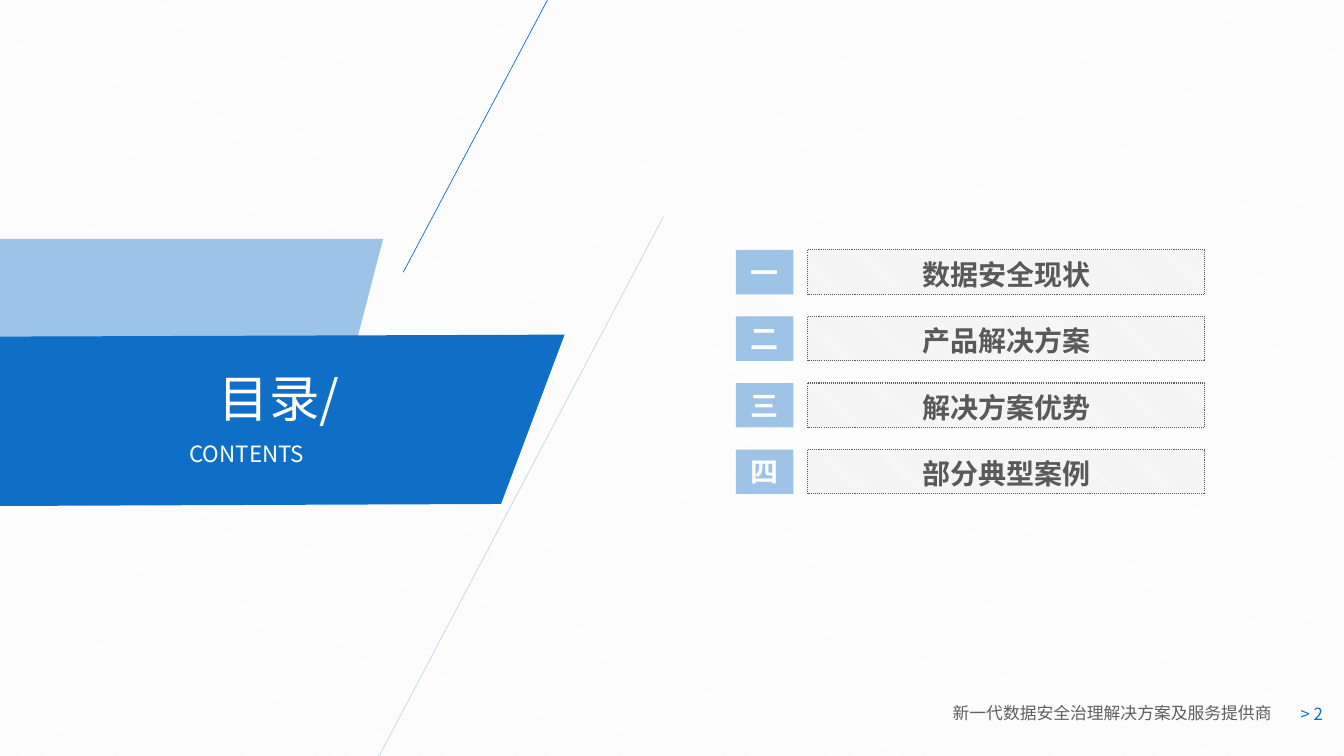
from lxml import etree
from pptx import Presentation
from pptx.dml.color import RGBColor
from pptx.enum.dml import MSO_LINE, MSO_PATTERN
from pptx.enum.shapes import MSO_CONNECTOR, MSO_SHAPE
from pptx.enum.text import MSO_ANCHOR, PP_ALIGN
from pptx.oxml.ns import qn
from pptx.util import Inches, Pt

FONT = "Noto Sans CJK SC"
BLUE, LIGHT_BLUE, PALE_BLUE = "0F6FC6", "9DC3E6", "BDD7EE"
WHITE, GRAY, DARK_GRAY = "FFFFFF", "D9D9D9", "595959"
TOP, MIDDLE = MSO_ANCHOR.TOP, MSO_ANCHOR.MIDDLE
LEFT, CENTER, RIGHT = PP_ALIGN.LEFT, PP_ALIGN.CENTER, PP_ALIGN.RIGHT
JUSTIFY = PP_ALIGN.JUSTIFY


def rgb(color):
    return RGBColor.from_string(color)


def write(sp, text, size=20, color=WHITE, bold=False, align=LEFT,
          anchor=TOP, spacing=None, inset=0.05):
    """Put one formatted paragraph into a shape; inset is top and bottom."""
    tf = sp.text_frame
    tf.word_wrap = True
    tf.vertical_anchor = anchor
    tf.margin_top = tf.margin_bottom = Inches(inset)
    p = tf.paragraphs[0]
    p.alignment = align
    if spacing:
        p.line_spacing = spacing
    r = p.add_run()
    r.text = text
    r.font.size = Pt(size)
    r.font.bold = bold
    r.font.color.rgb = rgb(color)
    r.font.name = FONT
    etree.SubElement(r.font._element, qn("a:ea"), typeface=FONT)


prs = Presentation()
prs.slide_width, prs.slide_height = Inches(13.33), Inches(7.5)
s = prs.slides.add_slide(prs.slide_layouts[6])
bg = s.background.fill
bg.patterned()
bg.pattern = MSO_PATTERN.LIGHT_DOWNWARD_DIAGONAL
bg.fore_color.rgb = rgb("F2F2F2")
bg.back_color.rgb = rgb(WHITE)

# Slanted bands at the left edge
bands = [
    (LIGHT_BLUE, [(0, 2.37), (3.8, 2.37), (3.37, 4.03), (0, 4.05)]),
    (BLUE, [(0, 3.34), (5.6, 3.32), (4.97, 5), (0, 5.02)]),
]
for color, corners in bands:
    points = [(Inches(x), Inches(y)) for x, y in corners]
    outline = s.shapes.build_freeform(*points[0])
    outline.add_line_segments(points[1:], close=True)
    band = outline.convert_to_shape()
    band.shadow.inherit = False
    band.fill.solid()
    band.fill.fore_color.rgb = rgb(color)
    band.line.fill.background()

# Diagonal accent lines
for color, *ends in [(BLUE, 5.43, 0, 4, 2.7), (PALE_BLUE, 6.58, 2.15, 3.76, 7.5)]:
    accent = s.shapes.add_connector(MSO_CONNECTOR.STRAIGHT, *map(Inches, ends))
    accent.line.color.rgb = rgb(color)
    accent.line.width = Pt(0.5)
    etree.SubElement(accent._element.spPr, qn("a:effectLst"))

# Heading
title = s.shapes.add_textbox(Inches(2.07), Inches(3.59), Inches(1.55), Inches(0.71))
write(title, "目录/", size=36, align=JUSTIFY)
subtitle = s.shapes.add_textbox(Inches(1.78), Inches(4.32), Inches(1.55), Inches(0.37))
write(subtitle, "CONTENTS", size=16, align=JUSTIFY)

# Agenda rows
agenda = [("一", "数据安全现状"), ("二", "产品解决方案"),
          ("三", "解决方案优势"), ("四", "部分典型案例")]
for i, (number, topic) in enumerate(agenda):
    top = 2.48 + 0.66 * i
    frame = s.shapes.add_shape(MSO_SHAPE.RECTANGLE, Inches(8.01), Inches(top),
                               Inches(3.94), Inches(0.44))
    frame.shadow.inherit = False
    frame.fill.solid()
    frame.fill.fore_color.rgb = rgb(GRAY)
    srgb = frame._element.spPr.find(".//" + qn("a:srgbClr"))
    etree.SubElement(srgb, qn("a:alpha"), val="20000")
    frame.line.color.rgb = rgb(DARK_GRAY)
    frame.line.width = Pt(0)
    frame.line.dash_style = MSO_LINE.ROUND_DOT

    badge = s.shapes.add_shape(MSO_SHAPE.RECTANGLE, Inches(7.3), Inches(top),
                               Inches(0.57), Inches(0.44))
    badge.shadow.inherit = False
    badge.fill.solid()
    badge.fill.fore_color.rgb = rgb(LIGHT_BLUE)
    badge.line.fill.background()
    write(badge, number, bold=True, align=CENTER, anchor=MIDDLE, inset=0)

    label = s.shapes.add_textbox(Inches(8.01), Inches(top - 0.08),
                                 Inches(3.94), Inches(0.54))
    write(label, topic, color=DARK_GRAY, bold=True, align=CENTER,
          anchor=MIDDLE, spacing=1.3)

# Footer
footer = s.shapes.add_textbox(Inches(9.35), Inches(6.92), Inches(3.48), Inches(0.3))
write(footer, "新一代数据安全治理解决方案及服务提供商", size=12, color="605E5E")
page = s.shapes.add_textbox(Inches(12.61), Inches(6.88), Inches(0.61), Inches(0.4))
write(page, "> 2", size=12, color=BLUE, align=RIGHT, anchor=MIDDLE)

prs.save("out.pptx")
